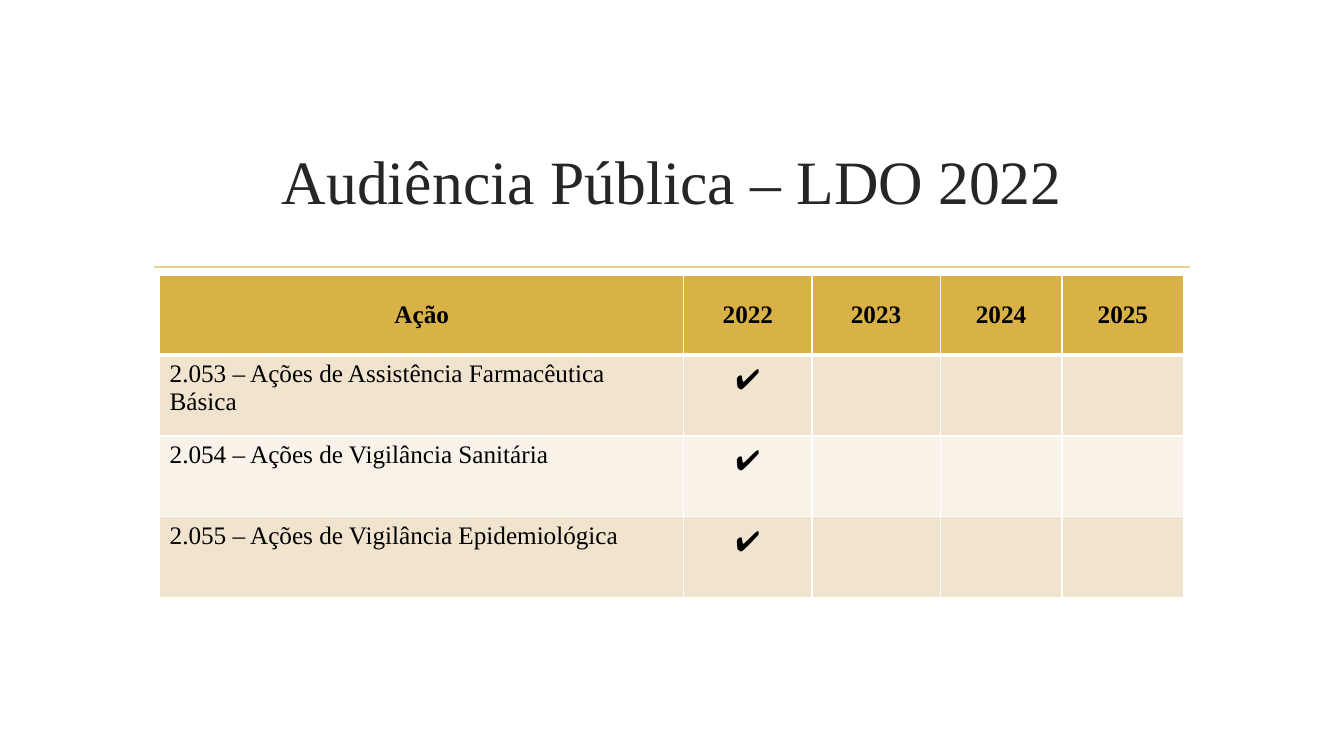
from lxml.etree import SubElement
from pptx import Presentation
from pptx.dml.color import RGBColor
from pptx.enum.shapes import MSO_CONNECTOR
from pptx.enum.text import MSO_ANCHOR, PP_ALIGN
from pptx.oxml.ns import qn
from pptx.util import Pt

SERIF = "Times New Roman"
BLACK, WHITE = "000000", "FFFFFF"
HEADER_FILL = "D9B247"
BAND_FILLS = ["F1E4CF", "F8F2E9"]

COLUMN_WIDTHS = [374.4, 91.6, 91.6, 87, 87]
ROW_HEIGHTS = [57, 57.6, 57.6, 57.6]
HEADINGS = ["Ação", "2022", "2023", "2024", "2025"]
ACTIONS = [
    "2.053 – Ações de Assistência Farmacêutica Básica",
    "2.054 – Ações de Vigilância Sanitária",
    "2.055 – Ações de Vigilância Epidemiológica",
]

TITLE_STYLE = {"name": SERIF, "size": Pt(44)}
HEADING_STYLE = {"name": SERIF, "size": Pt(18), "bold": True}
ACTION_STYLE = {"name": SERIF, "size": Pt(18), "bold": False}
CHECK_STYLE = {"name": "Cabin", "size": Pt(20), "bold": False}


def rgb(value):
    return RGBColor.from_string(value)


def write(frame, text, style, color=BLACK, align=PP_ALIGN.CENTER):
    paragraph = frame.paragraphs[0]
    paragraph.alignment = align
    run = paragraph.add_run()
    run.text = text
    for attribute, value in style.items():
        setattr(run.font, attribute, value)
    run.font.color.rgb = rgb(color)


def add_title(slide, text):
    title = slide.shapes.add_textbox(Pt(102.2), Pt(77), Pt(756), Pt(103))
    frame = title.text_frame
    frame.word_wrap = True
    frame.vertical_anchor = MSO_ANCHOR.MIDDLE
    write(frame, text, TITLE_STYLE, "262626")


def add_rule(slide, left, right, y):
    rule = slide.shapes.add_connector(
        MSO_CONNECTOR.STRAIGHT, Pt(left), Pt(y), Pt(right), Pt(y))
    rule.line.color.rgb = rgb("E8D191")
    rule.line.width = Pt(1.25)
    SubElement(rule._element.spPr, qn("a:effectLst"))


def paint_cell(cell, fill, top=1, bottom=1):
    """Give the cell white borders, then its fill, in schema order."""
    properties = cell._tc.get_or_add_tcPr()
    for side, width in {"L": 1, "R": 1, "T": top, "B": bottom}.items():
        border = SubElement(properties, qn(f"a:ln{side}"), w=str(Pt(width)))
        border_fill = SubElement(border, qn("a:solidFill"))
        SubElement(border_fill, qn("a:srgbClr"), val=WHITE)
    cell.fill.solid()
    cell.fill.fore_color.rgb = rgb(fill)


def add_action_table(slide):
    table = slide.shapes.add_table(
        len(ROW_HEIGHTS), len(COLUMN_WIDTHS), Pt(114), Pt(196.8),
        Pt(sum(COLUMN_WIDTHS)), Pt(sum(ROW_HEIGHTS))).table
    for column, width in zip(table.columns, COLUMN_WIDTHS):
        column.width = Pt(width)
    for row, height in zip(table.rows, ROW_HEIGHTS):
        row.height = Pt(height)

    for column, heading in enumerate(HEADINGS):
        cell = table.cell(0, column)
        paint_cell(cell, HEADER_FILL, bottom=3)
        cell.vertical_anchor = MSO_ANCHOR.MIDDLE
        write(cell.text_frame, heading, HEADING_STYLE)

    for row, action in enumerate(ACTIONS, start=1):
        for column in range(len(HEADINGS)):
            paint_cell(table.cell(row, column), BAND_FILLS[(row - 1) % 2],
                       top=3 if row == 1 else 1)
        write(table.cell(row, 0).text_frame, action, ACTION_STYLE,
              align=PP_ALIGN.LEFT)
        check = table.cell(row, 1)
        check.vertical_anchor = MSO_ANCHOR.MIDDLE
        check.margin_bottom = Pt(26)
        write(check.text_frame, "✔", CHECK_STYLE)


def main():
    presentation = Presentation()
    presentation.slide_width = Pt(960)
    presentation.slide_height = Pt(540)
    slide = presentation.slides.add_slide(presentation.slide_layouts[6])
    add_rule(slide, 110.2, 850.3, 190.8)
    add_title(slide, "Audiência Pública – LDO 2022")
    add_action_table(slide)
    presentation.save("out.pptx")


if __name__ == "__main__":
    main()
